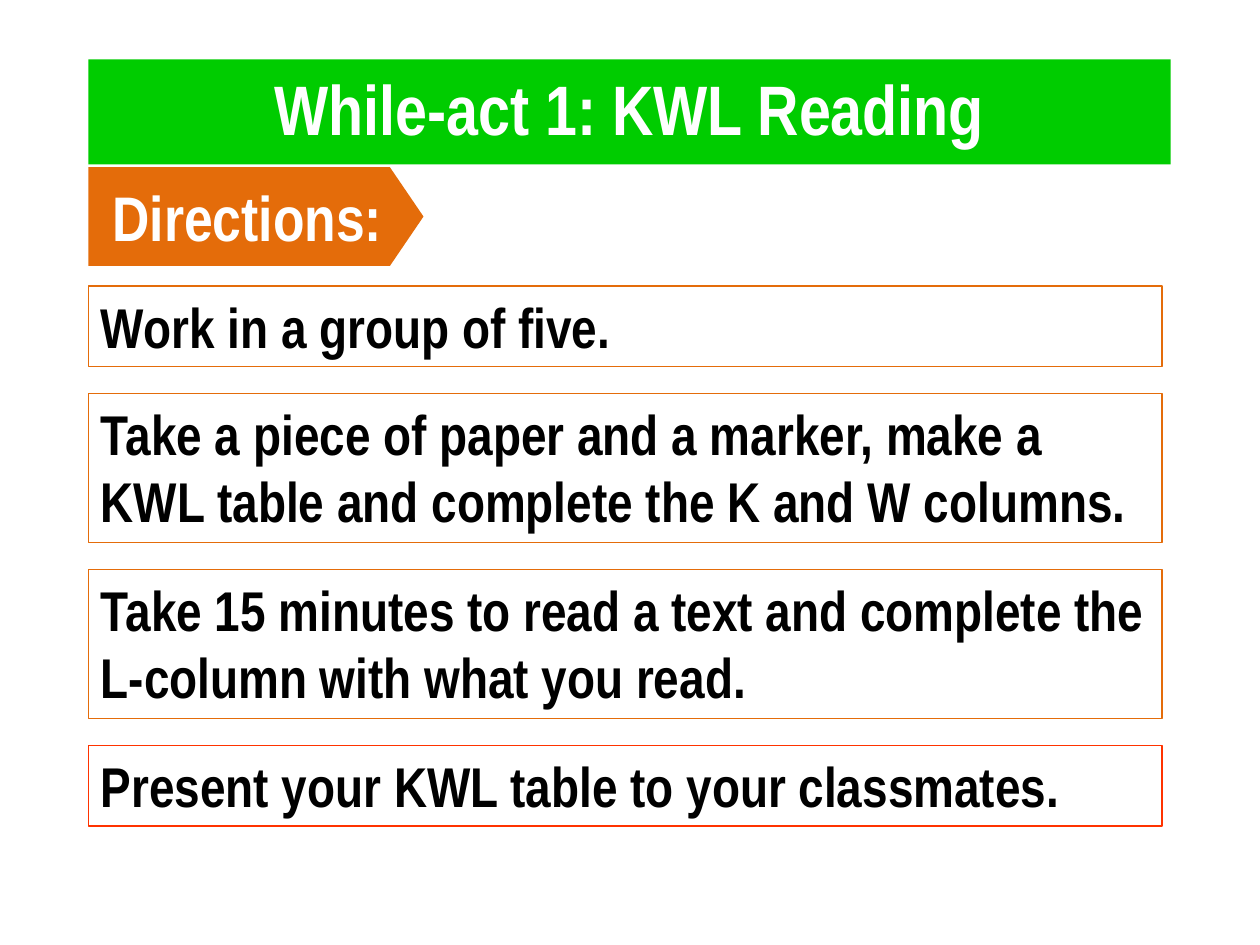
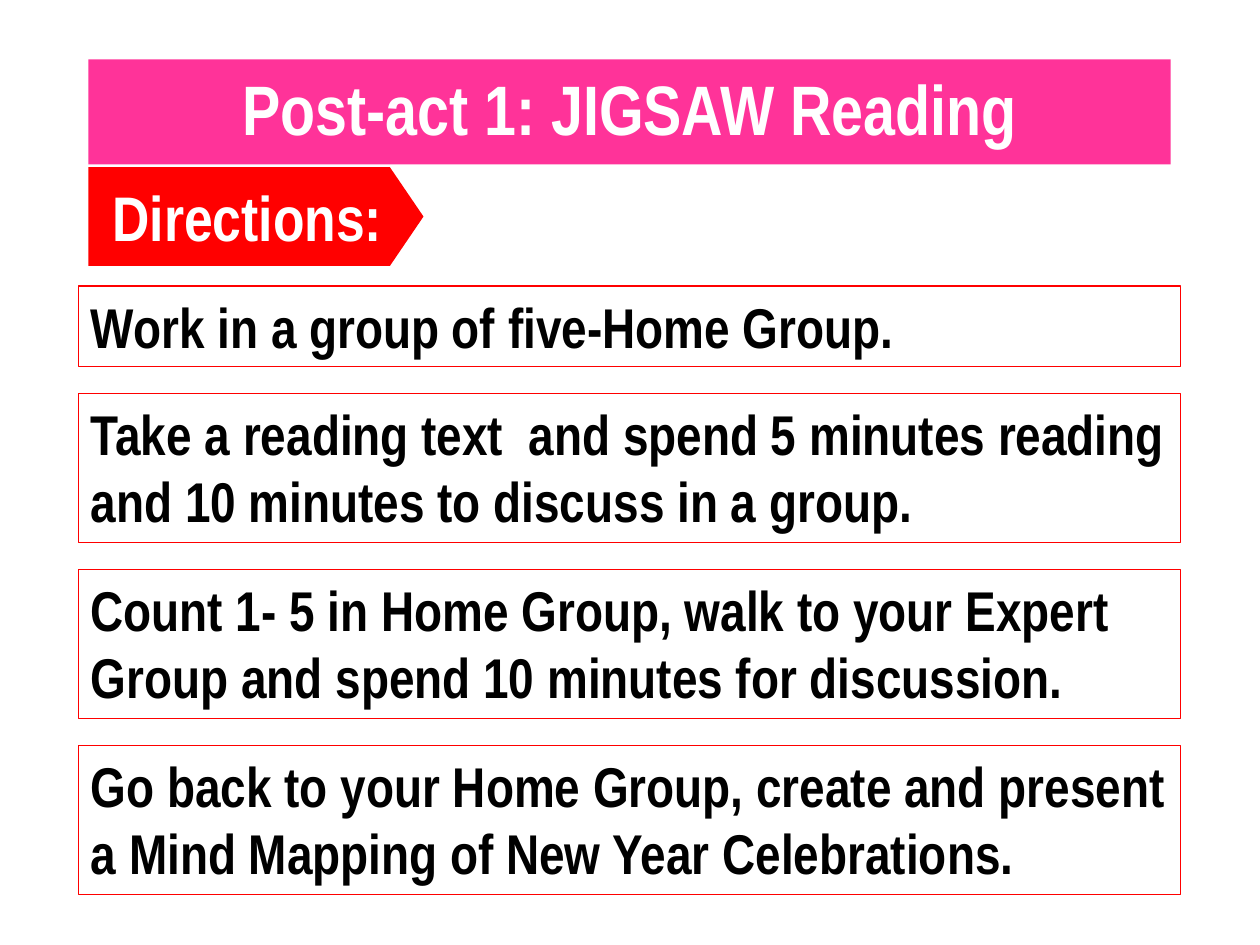
from pptx import Presentation
from pptx import util as u
from pptx.dml.color import RGBColor
from pptx.enum import shapes, text

FONT = "Arial Narrow"
COLOURS = {
    "white": "FFFFFF",
    "black": "000000",
    "green": "00CC00",
    "pink": "FF3399",
    "orange": "E46C0A",
    "vermilion": "FF3300",
    "red": "FF0000",
}

# Boxes are left, top, width, height in points
BANNER_BOX = (50.5, 34, 618.5, 55.5)
TAG_BOX = (50.5, 95.5, 191.5, 56.5)
STEPS_TOP = 163.4
STEP_GAP = 15.3
LINE_HEIGHT = 39
STEP_PADDING = 7.2

ACTIVITIES = [
    {
        "title": "While-act 1: KWL Reading",
        "banner": "green",
        "tag": "orange",
        "steps_left": 50.5,
        "steps_width": 613.5,
        # Wording, number of lines, border colour
        "steps": [
            ("Work in a group of five.", 1, "orange"),
            ("Take a piece of paper and a marker, make a KWL table "
             "and complete the K and W columns.", 2, "orange"),
            ("Take 15 minutes to read a text and complete the L-column "
             "with what you read.", 2, "orange"),
            ("Present your KWL table to your classmates.", 1, "vermilion"),
        ],
    },
    {
        "title": "Post-act 1: JIGSAW Reading",
        "banner": "pink",
        "tag": "red",
        "steps_left": 44.75,
        "steps_width": 630,
        "steps": [
            ("Work in a group of five-Home Group.", 1, "red"),
            ("Take a reading text  and spend 5 minutes reading "
             "and 10 minutes to discuss in a group.", 2, "red"),
            ("Count 1- 5 in Home Group, walk to your Expert Group "
             "and spend 10 minutes for discussion.", 2, "red"),
            ("Go back to your Home Group, create and present "
             "a Mind Mapping of New Year Celebrations.", 2, "red"),
        ],
    },
]


def colour(name):
    return RGBColor.from_string(COLOURS[name])


def place(shape, box):
    shape.left, shape.top, shape.width, shape.height = map(u.Pt, box)


def fill(shape, name):
    shape.fill.solid()
    shape.fill.fore_color.rgb = colour(name)


def write(shape, words, size, ink, alignment, anchor):
    frame = shape.text_frame
    frame.word_wrap = True
    frame.vertical_anchor = anchor
    paragraph = frame.paragraphs[0]
    paragraph.alignment = alignment
    run = paragraph.add_run()
    run.text = words
    run.font.name = FONT
    run.font.size = u.Pt(size)
    run.font.bold = True
    run.font.color.rgb = colour(ink)


def add_banner(slide, box, title, background):
    banner = slide.shapes.title
    place(banner, box)
    fill(banner, background)
    write(banner, title, 40, "white", text.PP_ALIGN.CENTER, text.MSO_ANCHOR.TOP)
    banner.text_frame.auto_size = text.MSO_AUTO_SIZE.SHAPE_TO_FIT_TEXT


def add_tag(slide, box, words, background):
    tag = slide.shapes.add_shape(shapes.MSO_SHAPE.PENTAGON, *map(u.Pt, box))
    tag.adjustments[0] = 0.34
    tag.shadow.inherit = False
    tag.line.fill.background()
    fill(tag, background)
    write(tag, words, 36, "white", text.PP_ALIGN.CENTER, text.MSO_ANCHOR.MIDDLE)


def add_step(slide, box, words, border):
    step = slide.shapes.add_textbox(*map(u.Pt, box))
    step.line.color.rgb = colour(border)
    step.line.width = u.Pt(0.75)
    write(step, words, 32, "black", text.PP_ALIGN.LEFT, text.MSO_ANCHOR.TOP)
    step.text_frame.auto_size = text.MSO_AUTO_SIZE.SHAPE_TO_FIT_TEXT


def add_steps(slide, left, top, width, steps):
    for words, lines, border in steps:
        height = STEP_PADDING + lines * LINE_HEIGHT
        add_step(slide, (left, top, width, height), words, border)
        top += height + STEP_GAP


def add_activity_slide(presentation, activity):
    slide = presentation.slides.add_slide(presentation.slide_layouts[5])
    # Coloured title band
    add_banner(slide, BANNER_BOX, activity["title"], activity["banner"])
    # Arrow-shaped heading
    add_tag(slide, TAG_BOX, "Directions:", activity["tag"])
    # Stack of framed directions
    add_steps(slide, activity["steps_left"], STEPS_TOP,
              activity["steps_width"], activity["steps"])


def main():
    presentation = Presentation()
    presentation.slide_width = u.Pt(720)
    presentation.slide_height = u.Pt(540)
    for activity in ACTIVITIES:
        add_activity_slide(presentation, activity)
    presentation.save("out.pptx")


if __name__ == "__main__":
    main()
